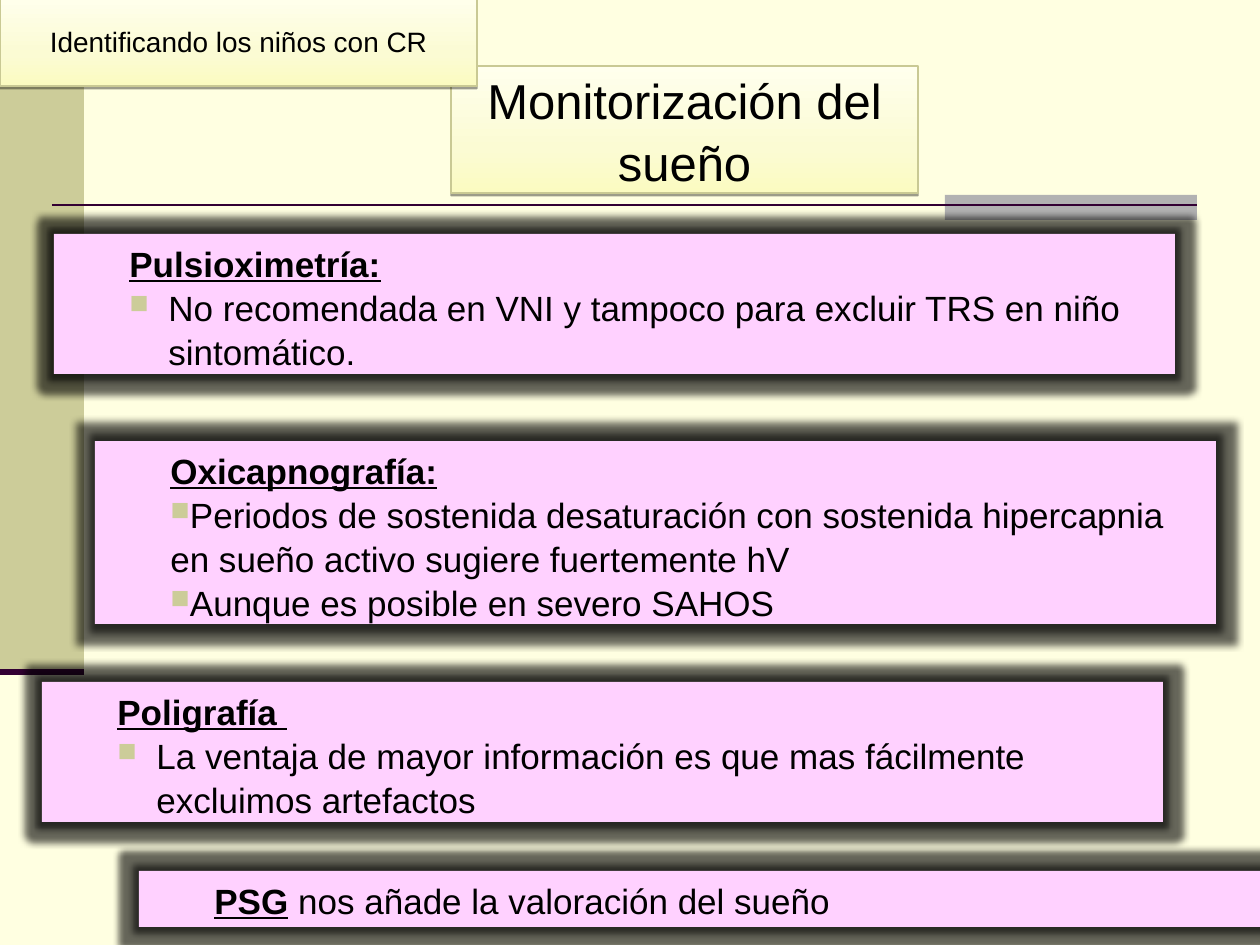
"""Build the sleep monitoring slide."""
from pptx import Presentation
from pptx.dml.color import RGBColor
from pptx.enum.shapes import MSO_CONNECTOR, MSO_SHAPE
from pptx.enum.text import MSO_ANCHOR, PP_ALIGN
from pptx.oxml import parse_xml
from pptx.oxml.ns import nsdecls
from pptx.util import Pt

PX = 914400 / 126
COLORS = {
    "bg": "FFFFE1", "olive": "CCCC99", "gray": "B2B2B2", "plum": "330033",
    "pink": "FFD1FF", "edge": "C9C994", "text": "000000",
    "top": "FFFFED", "middle": "FBFBD3", "bottom": "FBFBC1",
}
rgb = {name: RGBColor.from_string(value) for name, value in COLORS.items()}


def add_rect(box, color):
    sp = s.shapes.add_shape(MSO_SHAPE.RECTANGLE, *[round(v * PX) for v in box])
    sp.shadow.inherit = False
    sp.fill.solid()
    sp.fill.fore_color.rgb = rgb[color]
    sp.line.fill.background()
    return sp


def format_run(r, size, heading=False):
    r.font.name = "Arial"
    r.font.size = Pt(size)
    r.font.color.rgb = rgb["text"]
    r.font.bold = heading
    r.font.underline = heading


prs = Presentation()
prs.slide_width, prs.slide_height = round(1260 * PX), round(945 * PX)
s = prs.slides.add_slide(prs.slide_layouts[5])
s.background.fill.solid()
s.background.fill.fore_color.rgb = rgb["bg"]

add_rect((0, 0, 84, 672), "olive")
add_rect((945, 195, 252, 25), "gray")
for x1, x2, y, width in [(52, 1197, 205, 1.5), (0, 84, 672, 3.5)]:
    line = s.shapes.add_connector(MSO_CONNECTOR.STRAIGHT, *[round(v * PX) for v in (x1, y, x2, y)])
    line.line.color.rgb = rgb["plum"]
    line.line.width = Pt(width)
    line._element.spPr.append(parse_xml(f"<a:effectLst {nsdecls('a')}/>"))

panels = [
    ((54, 234, 1121, 140), "Pulsioximetría:", "", 0.81, -0.31,
     ["No recomendada en VNI y tampoco para excluir TRS en niño sintomático."]),
    ((95, 441, 1121, 183), "Oxicapnografía:", "", 0.5, 0,
     ["Periodos de sostenida desaturación con sostenida hipercapnia en sueño activo sugiere fuertemente hV",
      "Aunque es posible en severo SAHOS"]),
    ((42, 682, 1121, 140), "Poligrafía ", "", 0.81, -0.31,
     ["La ventaja de mayor información es que mas fácilmente excluimos artefactos"]),
    ((139, 871, 1121, 56), "PSG", " nos añade la valoración del sueño", 0, 0, []),
]
for box, heading, rest, margin, indent, bullets in panels:
    sp = add_rect(box, "pink")
    sp._element.spPr.find("{*}effectLst").append(parse_xml(
        f'<a:glow {nsdecls("a")} rad="101600"><a:srgbClr val="000000">'
        '<a:alpha val="60000"/></a:srgbClr></a:glow>'))
    tf = sp.text_frame
    tf.word_wrap = True
    tf.vertical_anchor = MSO_ANCHOR.TOP
    tf.text = "\n".join([heading] + bullets)
    if rest:
        tf.paragraphs[0].add_run().text = rest
    for i, p in enumerate(tf.paragraphs):
        p.alignment = PP_ALIGN.LEFT
        p.line_spacing = 1.05
        pPr = p._p.get_or_add_pPr()
        pPr.set("marL", str(round((margin if i else 0.5) * 914400)))
        pPr.set("indent", str(round((indent if i else 0) * 914400)))
        if i:
            for xml in (f'<a:buClr {nsdecls("a")}><a:srgbClr val="{COLORS["olive"]}"/></a:buClr>',
                        f'<a:buSzPct {nsdecls("a")} val="75000"/>',
                        f'<a:buChar {nsdecls("a")} char="■"/>'):
                pPr.append(parse_xml(xml))
        for j, r in enumerate(p.runs):
            format_run(r, 20, heading=i == 0 and j == 0)

title = s.shapes.title
title.left, title.top, title.width, title.height = [round(v * PX) for v in (451, 66, 467, 127)]
section = add_rect((0, -4, 477, 90), "top")
stops = "".join(f'<a:gs pos="{pos}"><a:srgbClr val="{COLORS[name]}"/></a:gs>'
                for pos, name in [(0, "top"), (65000, "middle"), (100000, "bottom")])
for sp, text, size in [(title, "Monitorización del sueño", 28),
                       (section, "Identificando los niños con CR", 16)]:
    sp.shadow.inherit = False
    sp.fill.solid()
    sp.line.color.rgb = rgb["edge"]
    sp.line.width = Pt(0.75)
    spPr = sp._element.spPr
    spPr.replace(spPr.find("{*}solidFill"), parse_xml(
        f'<a:gradFill {nsdecls("a")} rotWithShape="1"><a:gsLst>{stops}</a:gsLst>'
        '<a:lin ang="5400000" scaled="0"/></a:gradFill>'))
    spPr.find("{*}effectLst").append(parse_xml(
        f'<a:outerShdw {nsdecls("a")} blurRad="0" dist="20320" dir="5400000" rotWithShape="0">'
        '<a:srgbClr val="000000"><a:alpha val="38000"/></a:srgbClr></a:outerShdw>'))
    tf = sp.text_frame
    tf.text = text
    tf.word_wrap = True
    tf.vertical_anchor = MSO_ANCHOR.MIDDLE
    p = tf.paragraphs[0]
    p.alignment = PP_ALIGN.CENTER
    p.line_spacing = 1.05
    format_run(p.runs[0], size)

prs.save("out.pptx")
